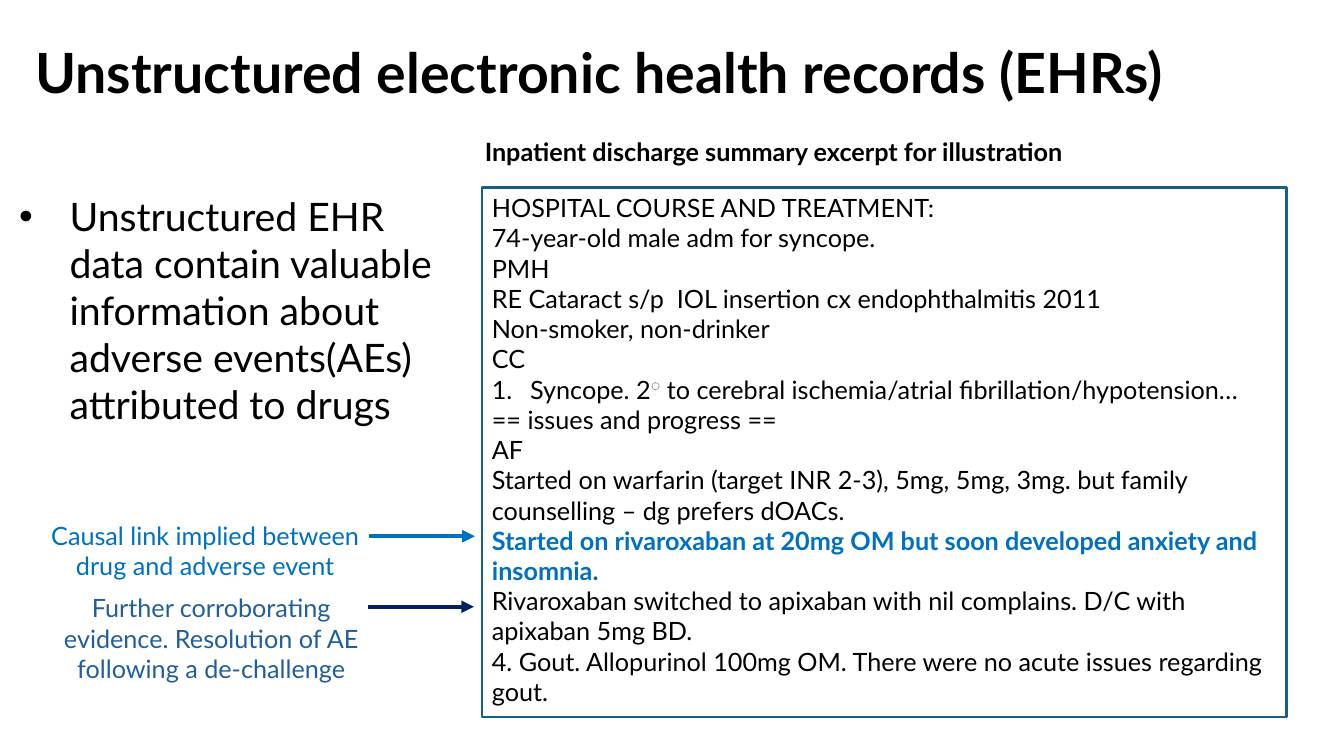
from lxml import etree
from pptx import Presentation
from pptx.dml.color import RGBColor
from pptx.enum import shapes, text
from pptx.oxml import ns
from pptx.util import Inches, Pt

BLACK = RGBColor(0x00, 0x00, 0x00)
WHITE = RGBColor(0xFF, 0xFF, 0xFF)
TEAL = RGBColor(0x15, 0x60, 0x82)
BRIGHT_BLUE = RGBColor(0x00, 0x70, 0xC0)
STEEL_BLUE = RGBColor(0x21, 0x5F, 0x9A)
NAVY = RGBColor(0x00, 0x20, 0x60)

CAUSAL_EVENT = "Started on rivaroxaban at 20mg OM but soon developed anxiety and insomnia"
DIAGNOSIS = ("Syncope. 2", "◌", " to cerebral ischemia/atrial fibrillation/hypotension…")
SUMMARY = [
    ("HOSPITAL COURSE AND TREATMENT:",),
    ("74-year-old male adm for syncope.",),
    ("PMH",),
    ("RE Cataract s/p  IOL insertion cx endophthalmitis 2011",),
    ("Non-smoker, non-drinker",),
    ("CC",),
    DIAGNOSIS,
    ("== issues and progress ==",),
    ("AF",),
    ("Started on warfarin (target INR 2-3), 5mg, 5mg, 3mg. but family "
     "counselling – dg prefers dOACs.",),
    (CAUSAL_EVENT, "."),
    ("Rivaroxaban switched to apixaban with nil complains. D/C with apixaban 5mg BD.",),
    ("4. Gout. Allopurinol 100mg OM. There were no acute issues regarding gout.",),
]


class SlideBuilder:
    font_name = "Lato"
    text_size = 18

    def __init__(self, slide):
        self.slide = slide

    def place(self, shape, left, top, width, height):
        shape.left, shape.top = Inches(left), Inches(top)
        shape.width, shape.height = Inches(width), Inches(height)

    def style(self, run, color=BLACK, size=None, bold=False):
        run.font.name = self.font_name
        run.font.size = Pt(size or self.text_size)
        run.font.bold = bold
        run.font.color.rgb = color

    def bullet(self, paragraph, indent, tag, **attributes):
        """Give a paragraph a hanging indent and a bullet or number."""
        properties = paragraph._p.get_or_add_pPr()
        properties.set("marL", str(Inches(indent)))
        properties.set("indent", str(-Inches(indent)))
        etree.SubElement(properties, ns.qn(tag), attributes)

    def title(self, wording, *box):
        title = self.slide.shapes.title
        self.place(title, *box)
        frame = title.text_frame
        frame.text = wording
        frame.auto_size = text.MSO_AUTO_SIZE.NONE
        frame.vertical_anchor = text.MSO_ANCHOR.MIDDLE
        heading = frame.paragraphs[0]
        heading.alignment = text.PP_ALIGN.LEFT
        heading.line_spacing = 0.9
        self.style(heading.runs[0], size=39.6, bold=True)

    def body(self, wording, *box):
        body = self.slide.placeholders[1]
        self.place(body, *box)
        frame = body.text_frame
        frame.text = wording
        frame.auto_size = text.MSO_AUTO_SIZE.NONE
        point = frame.paragraphs[0]
        point.space_before = Pt(0)
        self.bullet(point, 0.5, "a:buChar", char="•")
        self.style(point.runs[0], size=28)

    def label(self, wording, *box, color=BLACK, bold=False, align=text.PP_ALIGN.LEFT):
        label = self.slide.shapes.add_textbox(*map(Inches, box))
        frame = label.text_frame
        frame.word_wrap = True
        frame.auto_size = text.MSO_AUTO_SIZE.SHAPE_TO_FIT_TEXT
        frame.text = wording
        frame.paragraphs[0].alignment = align
        self.style(frame.paragraphs[0].runs[0], color, bold=bold)

    def panel(self, lines, *box):
        panel = self.slide.shapes.add_shape(
            shapes.MSO_SHAPE.RECTANGLE, *map(Inches, box))
        panel.shadow.inherit = False
        panel.fill.solid()
        panel.fill.fore_color.rgb = WHITE
        panel.line.color.rgb = TEAL
        panel.line.width = Pt(1.5)
        frame = panel.text_frame
        frame.word_wrap = True
        frame.auto_size = text.MSO_AUTO_SIZE.SHAPE_TO_FIT_TEXT
        frame.vertical_anchor = text.MSO_ANCHOR.TOP
        for number, parts in enumerate(lines):
            paragraph = frame.add_paragraph() if number else frame.paragraphs[0]
            paragraph.alignment = text.PP_ALIGN.LEFT
            if parts is DIAGNOSIS:
                self.bullet(paragraph, 0.38, "a:buAutoNum", type="arabicPeriod")
            for part in parts:
                run = paragraph.add_run()
                run.text = part
                self.style(run)
        return frame

    def arrow(self, left, right, y, color):
        arrow = self.slide.shapes.add_connector(
            shapes.MSO_CONNECTOR.ELBOW, Inches(left), Inches(y), Inches(right), Inches(y))
        arrow.line.color.rgb = color
        arrow.line.width = Pt(3)
        line = arrow.line._get_or_add_ln()
        etree.SubElement(line, ns.qn("a:tailEnd"), type="triangle")
        etree.SubElement(arrow._element.spPr, ns.qn("a:effectLst"))


def main():
    deck = Presentation()
    deck.slide_width, deck.slide_height = Inches(13.33), Inches(7.5)
    page = SlideBuilder(deck.slides.add_slide(deck.slide_layouts[1]))

    page.title("Unstructured electronic health records (EHRs)", 0.25, 0.29, 11.89, 0.91)
    page.body("Unstructured EHR data contain valuable information about "
              "adverse events(AEs) attributed to drugs", 0.09, 1.86, 4.62, 5.62)

    summary = page.panel(SUMMARY, 4.78, 1.86, 7.98, 5.25)
    degree = summary.paragraphs[SUMMARY.index(DIAGNOSIS)].runs[1]
    degree.font._element.set("baseline", "30000")
    event, full_stop = summary.paragraphs[SUMMARY.index((CAUSAL_EVENT, "."))].runs
    page.style(event, BRIGHT_BLUE, bold=True)
    page.style(full_stop, TEAL, bold=True)

    page.label("Inpatient discharge summary excerpt for illustration",
               4.71, 1.3, 6.2, 0.4, bold=True)
    page.label("Causal link implied between drug and adverse event",
               0.33, 5.11, 3.41, 0.71, color=BRIGHT_BLUE, align=text.PP_ALIGN.CENTER)
    page.arrow(3.66, 4.71, 5.32, BRIGHT_BLUE)
    page.label("Further corroborating evidence. Resolution of AE following a de-challenge",
               0.39, 5.83, 3.41, 1.01, color=STEEL_BLUE, align=text.PP_ALIGN.CENTER)
    page.arrow(3.65, 4.7, 6.02, NAVY)

    deck.save("out.pptx")


if __name__ == "__main__":
    main()
